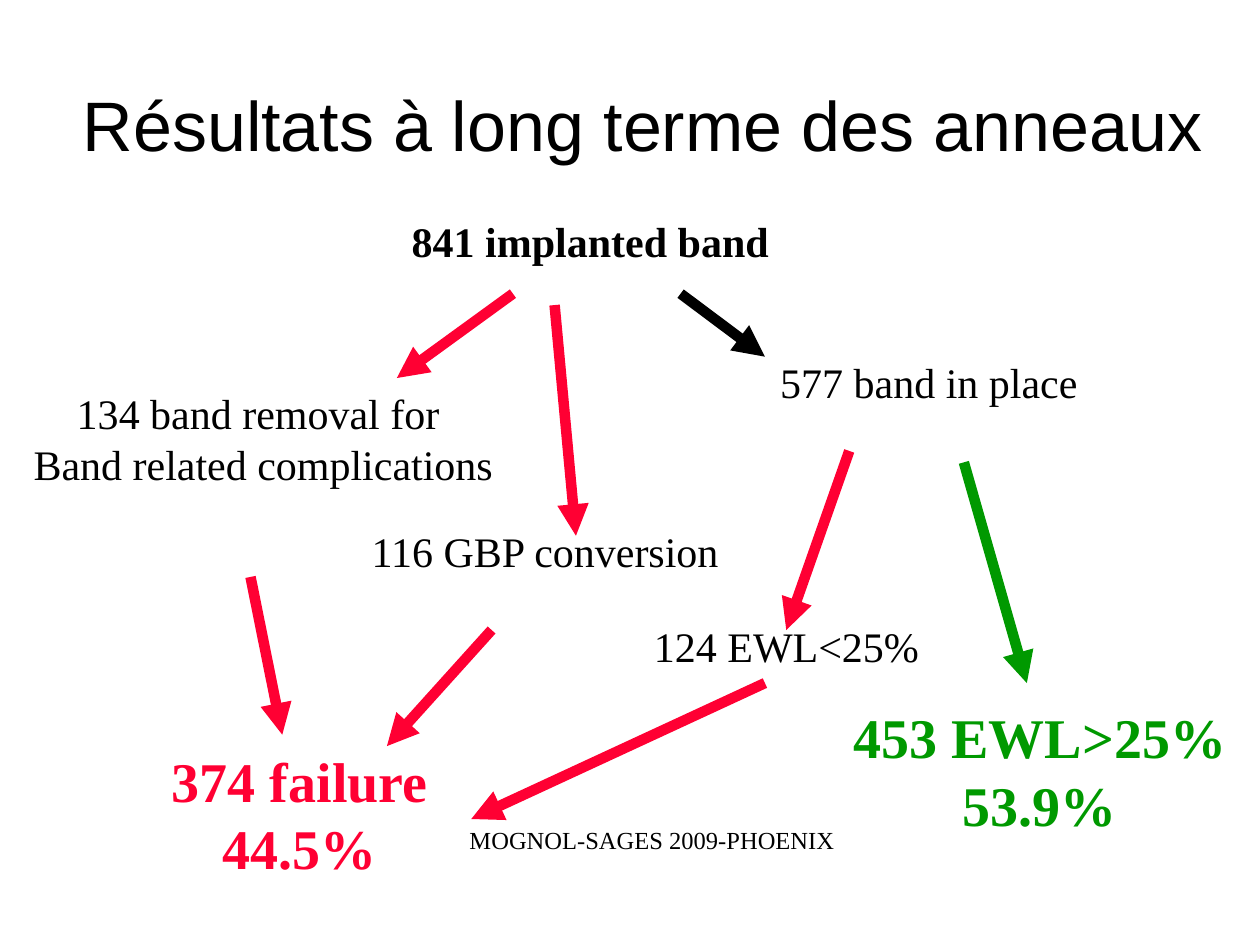
from lxml.etree import SubElement
from pptx import Presentation
from pptx.dml.color import RGBColor
from pptx.enum.shapes import MSO_CONNECTOR
from pptx.enum.text import MSO_ANCHOR, MSO_AUTO_SIZE, PP_ALIGN
from pptx.oxml.ns import qn
from pptx.util import Cm, Pt

BLACK, RED, GREEN = "000000", "FF0033", "009900"
SERIF = "Times New Roman"

# text, left, top, width, height, size, colour, bold
LABELS = [
    ("841 implanted band", 8.18, 4.34, 7.34, 0.91, 24, BLACK, True),
    ("134 band removal for \nBand related complications",
     0.56, 7.82, 9.4, 1.88, 24, BLACK, False),
    ("116 GBP conversion", 7.37, 10.59, 7.14, 0.91, 24, BLACK, False),
    ("577 band in place", 15.6, 7.19, 6.15, 0.91, 24, BLACK, False),
    ("124 EWL<25%", 13.06, 12.5, 5.49, 0.91, 24, BLACK, False),
    ("453 EWL>25%\n53.9%", 16.94, 14.17, 7.95, 2.57, 32, GREEN, True),
    ("374 failure\n44.5%", 3.2, 15.04, 5.59, 2.57, 32, RED, True),
]

# from x, from y, to x, to y, colour
ARROWS = [
    (10.34, 5.92, 8, 7.62, RED),
    (11.18, 6.15, 11.61, 10.8, RED),
    (13.72, 5.92, 15.42, 7.19, BLACK),
    (17.12, 9.09, 15.85, 12.7, RED),
    (19.43, 9.32, 20.7, 13.77, GREEN),
    (5.05, 11.63, 5.69, 14.81, RED),
    (9.91, 12.7, 7.8, 15.04, RED),
    (15.42, 13.77, 9.5, 16.51, RED),
]


def tint(code):
    return RGBColor.from_string(code)


def add_text(slide, text, left, top, width, height, size, color=BLACK,
             bold=False, font=SERIF, inset=0, indent=0.1, wrap=False,
             anchor=MSO_ANCHOR.TOP, fit=MSO_AUTO_SIZE.SHAPE_TO_FIT_TEXT):
    box = slide.shapes.add_textbox(Cm(left), Cm(top), Cm(width), Cm(height))
    frame = box.text_frame
    frame.text = text
    frame.word_wrap = wrap
    frame.auto_size = fit
    frame.vertical_anchor = anchor
    frame.margin_left = frame.margin_right = Cm(inset)
    frame.margin_top = frame.margin_bottom = Cm(inset)
    for para in frame.paragraphs:
        para.alignment = PP_ALIGN.CENTER
        para.font.name = font
        para.font.size = Pt(size)
        para.font.bold = bold
        para.font.color.rgb = tint(color)
        para._p.get_or_add_pPr().set("indent", str(Cm(indent)))


def add_arrow(slide, x1, y1, x2, y2, color):
    arrow = slide.shapes.add_connector(
        MSO_CONNECTOR.STRAIGHT, Cm(x1), Cm(y1), Cm(x2), Cm(y2))
    arrow.line.color.rgb = tint(color)
    arrow.line.width = Pt(6)
    SubElement(arrow.line._get_or_add_ln(), qn("a:tailEnd"), type="triangle")
    SubElement(arrow._element.spPr, qn("a:effectLst"))


def main():
    deck = Presentation()
    deck.slide_width, deck.slide_height = Cm(25.4), Cm(19.05)
    slide = deck.slides.add_slide(deck.slide_layouts[6])
    add_text(slide, "Résultats à long terme des anneaux",
             0.51, 0.91, 24.89, 3.18, 40, font="Arial", inset=0.13, indent=0,
             wrap=True, anchor=MSO_ANCHOR.MIDDLE, fit=MSO_AUTO_SIZE.NONE)
    add_text(slide, "MOGNOL-SAGES 2009-PHOENIX", 9.07, 16.66, 8.05, 0.53, 14,
             wrap=True, anchor=MSO_ANCHOR.MIDDLE)
    for label in LABELS:
        add_text(slide, *label)
    for arrow in ARROWS:
        add_arrow(slide, *arrow)
    deck.save("out.pptx")


if __name__ == "__main__":
    main()
